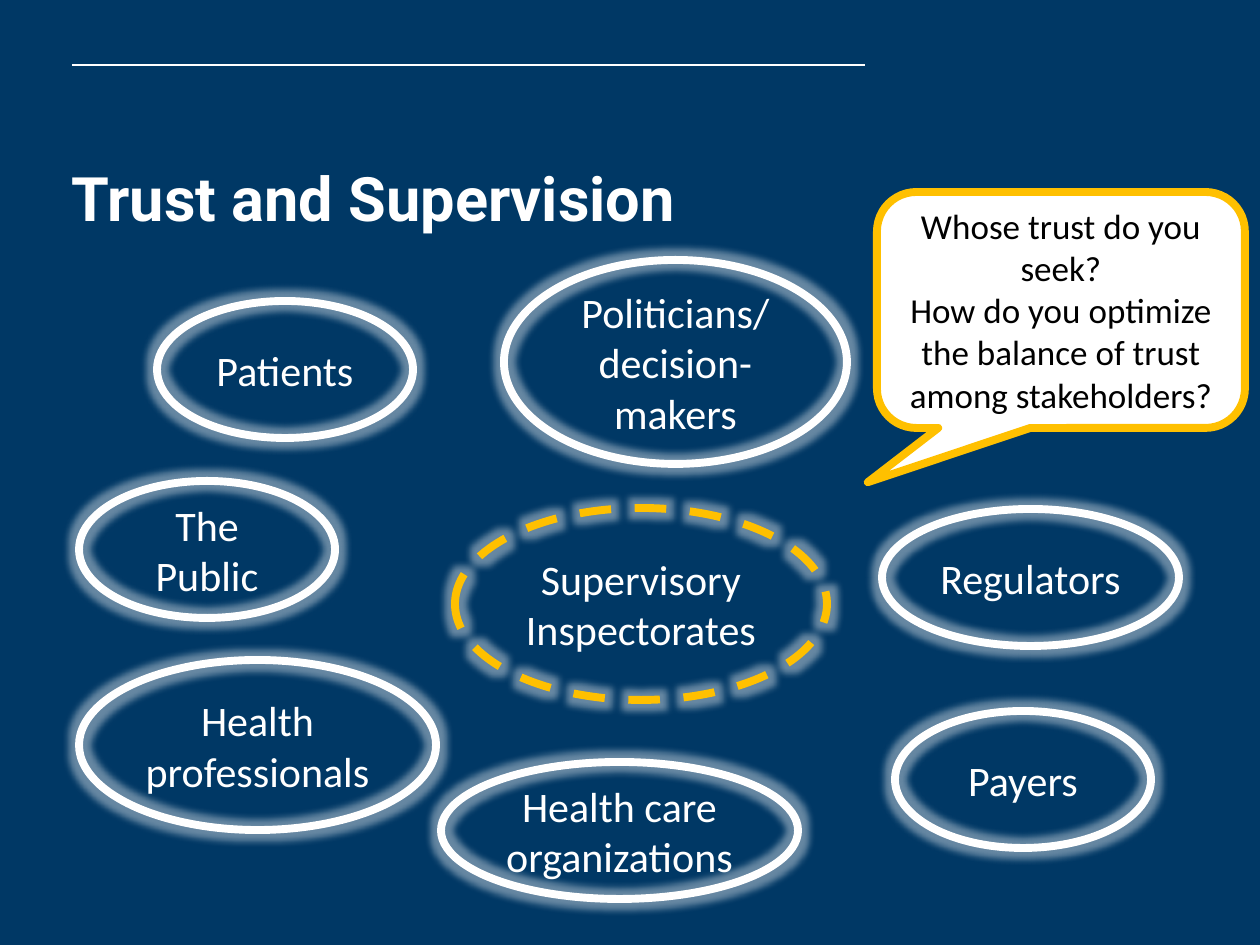
"""Build the Trust and Supervision stakeholder slide."""
from lxml import etree
from pptx import Presentation
from pptx import util as u
from pptx.dml.color import RGBColor
from pptx.enum import dml, shapes, text
from pptx.oxml import ns

PX = 914400 / 126
WHITE, GOLD, NAVY, BLACK = "FFFFFF", "FFC000", "003865", "000000"


def px(*lengths):
    return [u.Emu(round(n * PX)) for n in lengths]


def write(p, words, size=24, font="Calibri", color=WHITE, bold=False,
          align=text.PP_ALIGN.CENTER, spacing=1.0):
    p.alignment, p.line_spacing = align, spacing
    r = p.add_run()
    r.text = words
    r.font.size, r.font.name, r.font.bold = u.Pt(size), font, bold
    r.font.color.rgb = RGBColor.from_string(color)


prs = Presentation()
prs.slide_width, prs.slide_height = px(1260, 945)
s = prs.slides.add_slide(prs.slide_layouts[5])
s.background.fill.solid()
s.background.fill.fore_color.rgb = RGBColor.from_string(NAVY)

rule = s.shapes.add_connector(shapes.MSO_CONNECTOR.STRAIGHT, *px(72, 65, 865, 65))
rule.line.color.rgb = RGBColor.from_string(WHITE)
rule.line.width = u.Pt(0.75)
etree.SubElement(rule._element.spPr, ns.qn("a:effectLst"))

title = s.shapes.title
title.left, title.top, title.width, title.height = px(59, 162, 911, 105)
tf = title.text_frame
tf.vertical_anchor = text.MSO_ANCHOR.TOP
tf.auto_size = text.MSO_AUTO_SIZE.NONE
write(tf.paragraphs[0], "Trust and Supervision", size=35, font="Roboto",
      bold=True, align=text.PP_ALIGN.LEFT, spacing=0.9)

stakeholders = [
    ("Patients", 157, 301, 256, 137, WHITE),
    ("Health professionals", 79, 660, 357, 170, WHITE),
    ("Health care organizations", 441, 762, 357, 137, WHITE),
    ("The Public", 79, 481, 256, 137, WHITE),
    ("Regulators", 882, 509, 297, 137, WHITE),
    ("Politicians/ decision-makers", 504, 260, 343, 204, WHITE),
    ("Payers", 895, 711, 256, 137, WHITE),
    ("Supervisory Inspectorates", 455, 508, 372, 192, GOLD),
]
for name, x, y, w, h, color in stakeholders:
    sp = s.shapes.add_shape(shapes.MSO_SHAPE.OVAL, *px(x, y, w, h))
    sp.fill.background()
    sp.line.color.rgb = RGBColor.from_string(color)
    sp.line.width = u.Pt(4.5)
    if color == GOLD:
        sp.line.dash_style = dml.MSO_LINE.DASH
    sp.shadow.inherit = False
    effects = sp._element.spPr.find(ns.qn("a:effectLst"))
    glow = etree.SubElement(effects, ns.qn("a:glow"), rad="101600")
    tint = etree.SubElement(glow, ns.qn("a:srgbClr"), val=WHITE)
    etree.SubElement(tint, ns.qn("a:alpha"), val="40000")
    tf = sp.text_frame
    tf.word_wrap = True
    tf.vertical_anchor = text.MSO_ANCHOR.MIDDLE
    write(tf.paragraphs[0], name)

callout = s.shapes.add_shape(shapes.MSO_SHAPE.ROUNDED_RECTANGULAR_CALLOUT,
                             *px(877, 192, 368, 236))
for i, value in enumerate((-0.525, 0.73, 0.167)):
    callout.adjustments[i] = value
callout.fill.solid()
callout.fill.fore_color.rgb = RGBColor.from_string(WHITE)
callout.line.color.rgb = RGBColor.from_string(GOLD)
callout.line.width = u.Pt(4.5)
callout.shadow.inherit = False
tf = callout.text_frame
tf.word_wrap = True
tf.vertical_anchor = text.MSO_ANCHOR.MIDDLE
write(tf.paragraphs[0], "Whose trust do you seek?", size=20, color=BLACK)
write(tf.add_paragraph(),
      "How do you optimize the balance of trust among stakeholders?",
      size=20, color=BLACK)

prs.save("out.pptx")
